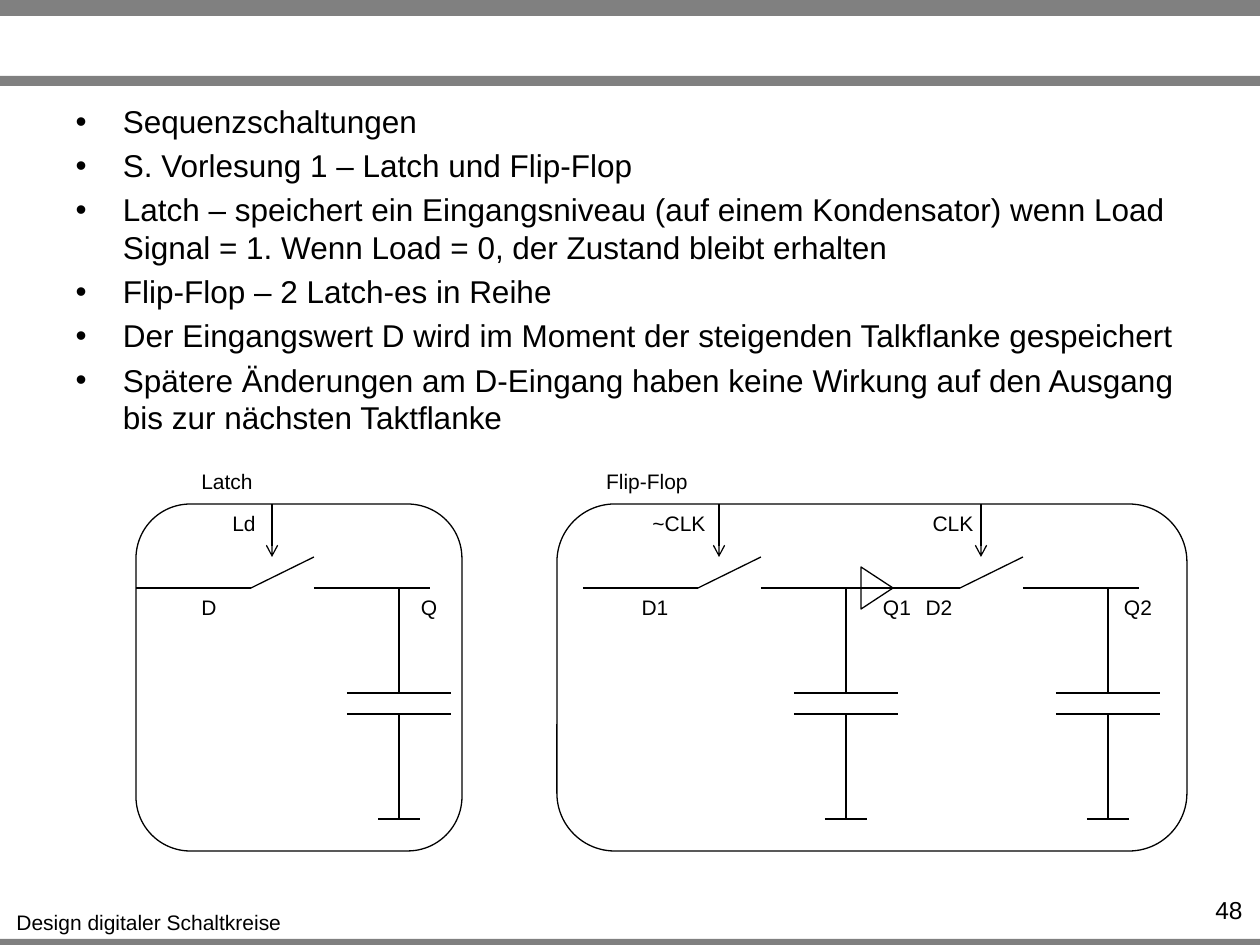
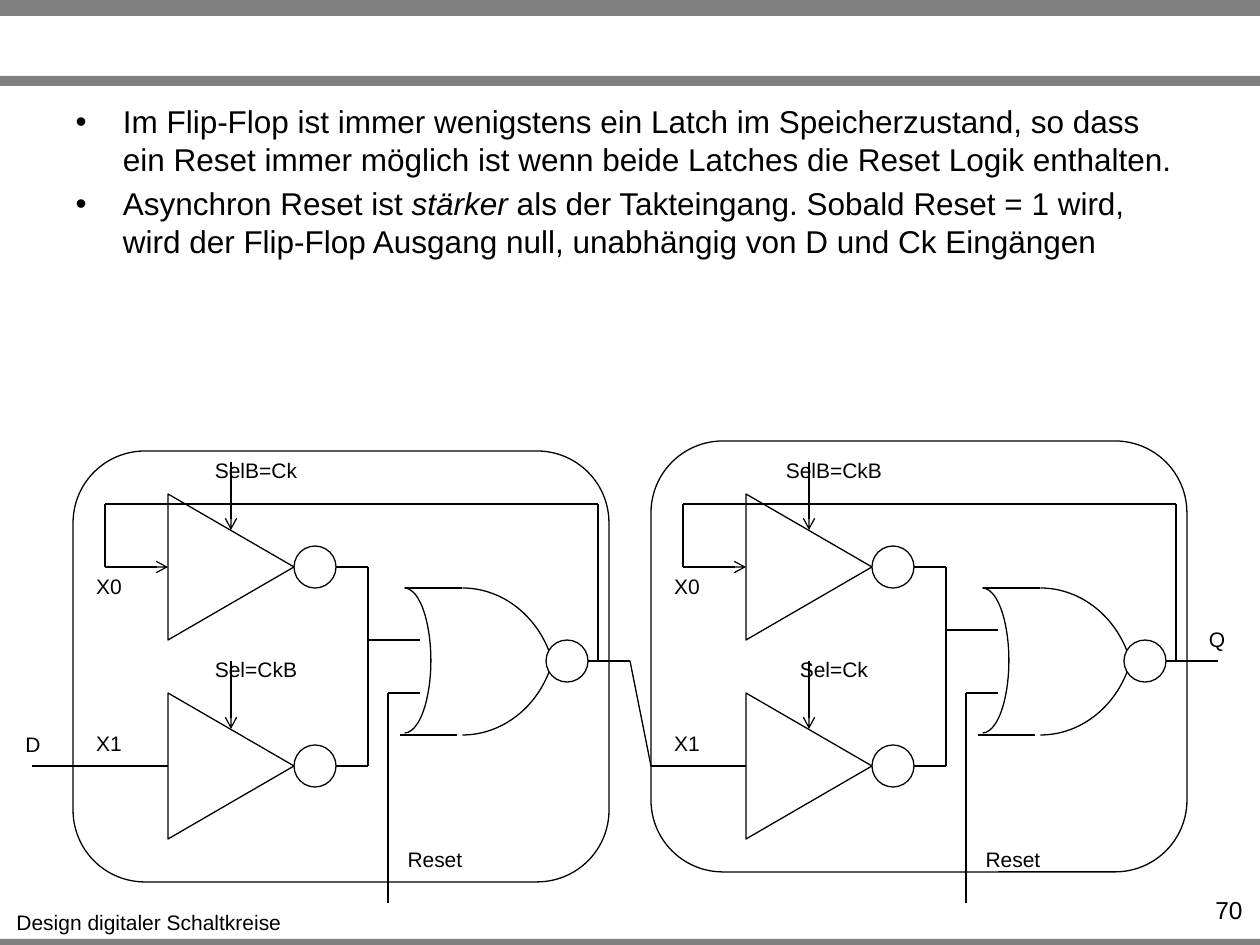
from dataclasses import dataclass

from lxml.etree import SubElement
from pptx import Presentation
from pptx.dml.color import RGBColor
from pptx.enum.shapes import MSO_CONNECTOR, MSO_SHAPE
from pptx.enum.text import MSO_ANCHOR, MSO_AUTO_SIZE, PP_ALIGN
from pptx.oxml.ns import qn
from pptx.util import Emu, Pt


@dataclass(frozen=True)
class Theme:
    font: str = "Arial"
    ink: RGBColor = RGBColor(0, 0, 0)
    paper: RGBColor = RGBColor(255, 255, 255)
    band: RGBColor = RGBColor(128, 128, 128)
    body_size: Pt = Pt(18)
    label_size: Pt = Pt(12)
    number_size: Pt = Pt(14)
    bullet_gap: Pt = Pt(3.6)
    stroke: Pt = Pt(0.75)


THEME = Theme()
EMU_PER_PX = 914400 / 126
WIDTH, HEIGHT = 1260, 945


def px(*lengths):
    return [Emu(round(length * EMU_PER_PX)) for length in lengths]


def style(paragraph, size, align=None):
    paragraph.font.name = THEME.font
    paragraph.font.size = size
    paragraph.font.color.rgb = THEME.ink
    if align is not None:
        paragraph.alignment = align


def write(shapes, text, left, top, width, height, size, align):
    frame = shapes.add_textbox(*px(left, top, width, height)).text_frame
    frame.word_wrap = False
    paragraph = frame.paragraphs[0]
    paragraph.text = text
    style(paragraph, size, align)


def label(shapes, text, centre, top, width=54):
    write(shapes, text, centre - width // 2, top, width, 38,
          THEME.label_size, PP_ALIGN.CENTER)


def wire(shapes, *points, arrow=False):
    for start, end in zip(points, points[1:]):
        segment = shapes.add_connector(MSO_CONNECTOR.STRAIGHT, *px(*start, *end))
        segment.line.color.rgb = THEME.ink
        segment.line.width = THEME.stroke
        properties = segment.element.spPr
        if arrow and end == points[-1]:
            SubElement(properties.find(qn("a:ln")), qn("a:tailEnd"), type="arrow")
        SubElement(properties, qn("a:effectLst"))


def outline(shapes, kind, left, top, width, height, filled=False):
    symbol = shapes.add_shape(kind, *px(left, top, width, height))
    symbol.shadow.inherit = False
    symbol.line.color.rgb = THEME.ink
    symbol.line.width = THEME.stroke
    if filled:
        symbol.fill.solid()
        symbol.fill.fore_color.rgb = THEME.paper
    else:
        symbol.fill.background()
    return symbol


def arc(shapes, left, top, width, height, start, end):
    curve = outline(shapes, MSO_SHAPE.ARC, left, top, width, height)
    curve.adjustments[0], curve.adjustments[1] = start, end


def bubble(shapes, left, middle):
    outline(shapes, MSO_SHAPE.OVAL, left, middle - 21, 42, 42, filled=True)


def buffer(shapes, left, middle, length, breadth):
    triangle = outline(shapes, MSO_SHAPE.ISOSCELES_TRIANGLE,
                       left + (length - breadth) / 2, middle - length / 2,
                       breadth, length)
    triangle.rotation = 90


def frame_slide(slide, number):
    for top, height in ((0, 16), (76, 10), (939, 10)):
        band = slide.shapes.add_shape(MSO_SHAPE.RECTANGLE, *px(0, top, WIDTH, height))
        band.shadow.inherit = False
        band.fill.solid()
        band.fill.fore_color.rgb = THEME.band
        band.line.fill.background()
    write(slide.shapes, "Design digitaler Schaltkreise", 3, 903, 292, 38,
          THEME.label_size, PP_ALIGN.CENTER)
    write(slide.shapes, str(number), 1145, 889, 110, 30,
          THEME.number_size, PP_ALIGN.RIGHT)


def fill_body(slide, bullets):
    body = slide.placeholders[1]
    body.left, body.top, body.width, body.height = px(63, 96, 1134, 93)
    frame = body.text_frame
    frame.auto_size = MSO_AUTO_SIZE.NONE
    frame.vertical_anchor = MSO_ANCHOR.TOP
    for index, bullet in enumerate(bullets):
        paragraph = frame.add_paragraph() if index else frame.paragraphs[0]
        style(paragraph, THEME.body_size)
        paragraph.space_before = THEME.bullet_gap if index else Pt(0)
        for position, text in enumerate(bullet.split("*")):
            run = paragraph.add_run()
            run.text = text
            if position % 2:
                run.font.italic = True


def new_slide(deck, number, bullets):
    slide = deck.slides.add_slide(deck.slide_layouts[1])
    title = slide.shapes.title.element
    title.getparent().remove(title)
    frame_slide(slide, number)
    fill_body(slide, bullets)
    return slide


def switch_stage(shapes, left, top, control, data, output):
    rail, upper, lower, ground = top + 84, top + 189, top + 210, top + 315
    storage = left + 263
    wire(shapes, (left, rail), (left + 115, rail), (left + 178, top + 53))
    wire(shapes, (left + 178, rail), (left + 294, rail))
    wire(shapes, (storage, rail), (storage, upper))
    wire(shapes, (storage, lower), (storage, ground))
    for level, reach in ((upper, 52), (lower, 52), (ground, 21)):
        wire(shapes, (storage - reach, level), (storage + reach, level))
    wire(shapes, (left + 136, top), (left + 136, top + 53), arrow=True)
    for (text, offset, width), height in ((control, top), (data, rail), (output, rail)):
        label(shapes, text, left + offset, height, width)


def storage_cell(shapes, caption, caption_centre, left, top, width, stages):
    label(shapes, caption, caption_centre, top - 42, 108)
    outline(shapes, MSO_SHAPE.ROUNDED_RECTANGLE, left, top, width, 347)
    for stage_left, *labels in stages:
        switch_stage(shapes, left + stage_left, top, *labels)


def latch_slide(deck):
    slide = new_slide(deck, 48, (
        "Sequenzschaltungen",
        "S. Vorlesung 1 – Latch und Flip-Flop",
        "Latch – speichert ein Eingangsniveau (auf einem Kondensator) wenn Load "
        "Signal = 1. Wenn Load = 0, der Zustand bleibt erhalten",
        "Flip-Flop – 2 Latch-es in Reihe",
        "Der Eingangswert D wird im Moment der steigenden Talkflanke gespeichert",
        "Spätere Änderungen am D-Eingang haben keine Wirkung auf den Ausgang "
        "bis zur nächsten Taktflanke",
    ))
    shapes = slide.shapes
    storage_cell(shapes, "Latch", 227, 136, 504, 326, (
        (0, ("Ld", 108, 54), ("D", 73, 40), ("Q", 293, 42)),))
    storage_cell(shapes, "Flip-Flop", 647, 557, 504, 630, (
        (26, ("~CLK", 96, 84), ("D1", 72, 58), ("Q1", 314, 58)),
        (288, ("CLK", 108, 72), ("D2", 94, 58), ("Q2", 293, 58))))
    buffer(shapes, 861, 588, 32, 42)


def tristate_inverter(shapes, left, middle, select):
    select_x = left + 63
    wire(shapes, (left + 168, middle), (left + 200, middle))
    buffer(shapes, left, middle, 126, 146)
    bubble(shapes, left + 126, middle)
    wire(shapes, (select_x, middle - 105), (select_x, middle - 37), arrow=True)
    label(shapes, select, left + 88, middle - 116, 140)


def nor_gate(shapes, left, top):
    gate = shapes.add_group_shape().shapes
    arc(gate, left + 10, top, 53, 145, 162, 53.88)
    arc(gate, left, top, 189, 210, 162, 201.69)
    arc(gate, left, top - 63, 189, 210, 14.31, 54)
    wire(gate, (left + 37, top), (left + 94, top))
    wire(gate, (left + 32, top + 147), (left + 89, top + 147))
    bubble(gate, left + 178, top + 73)


def reset_latch(shapes, left, top, box_top, selects, input_x, output_x, nor_input):
    feedback, keep, output, load = top + 63, top + 126, top + 220, top + 325
    bus, gate_in, reset, loop_start, loop_end = (
        left + offset for offset in (295, 347, 315, 525, 32))
    outline(shapes, MSO_SHAPE.ROUNDED_RECTANGLE, left, box_top, 536, 431)
    for middle, select in zip((keep, load), selects):
        tristate_inverter(shapes, left + 95, middle, select)
    wire(shapes, (bus, keep), (bus, load))
    wire(shapes, (bus, nor_input), (gate_in, nor_input))
    wire(shapes, (gate_in, top + 252), (reset, top + 252), (reset, top + 462))
    nor_gate(shapes, bus, top + 147)
    wire(shapes, (left + 515, output), (output_x, output))
    wire(shapes, (loop_start, output), (loop_start, feedback), (loop_end, feedback),
         (loop_end, keep), (left + 95, keep), arrow=True)
    wire(shapes, (input_x, load), (left + 95, load))
    label(shapes, "X0", left + 36, keep)
    label(shapes, "X1", left + 36, load - 42)
    label(shapes, "Reset", left + 362, top + 399, 90)


def reset_slide(deck):
    slide = new_slide(deck, 70, (
        "Im Flip-Flop ist immer wenigstens ein Latch im Speicherzustand, so dass "
        "ein Reset immer möglich ist wenn beide Latches die Reset Logik enthalten.",
        "Asynchron Reset ist *stärker* als der Takteingang. Sobald Reset = 1 wird, "
        "wird der Flip-Flop Ausgang null, unabhängig von D und Ck Eingängen",
    ))
    shapes = slide.shapes
    reset_latch(shapes, 73, 441, 451, ("SelB=Ck", "Sel=CkB"), 32, 630, 640)
    reset_latch(shapes, 651, 441, 441, ("SelB=CkB", "Sel=Ck"), 651, 1218, 630)
    wire(shapes, (630, 661), (651, 766))
    label(shapes, "D", 33, 725, 40)
    label(shapes, "Q", 1217, 620, 42)


def main():
    deck = Presentation()
    deck.slide_width, deck.slide_height = px(WIDTH, HEIGHT)
    latch_slide(deck)
    reset_slide(deck)
    deck.save("out.pptx")


if __name__ == "__main__":
    main()
